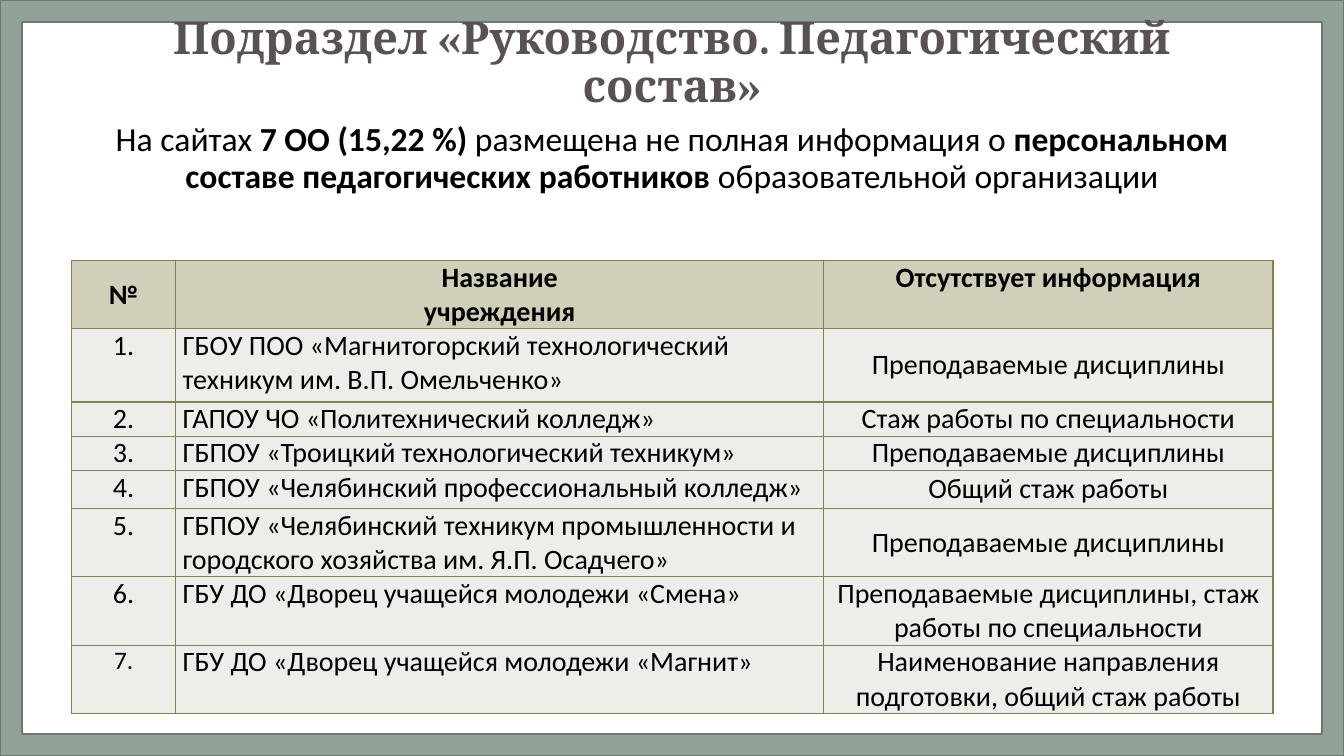
from dataclasses import dataclass

from lxml import etree
from pptx import Presentation
from pptx.dml.color import RGBColor
from pptx.enum.shapes import MSO_SHAPE
from pptx.enum.text import MSO_ANCHOR, MSO_AUTO_SIZE, PP_ALIGN
from pptx.oxml.ns import qn
from pptx.util import Pt

LEFT, MID = PP_ALIGN.LEFT, PP_ALIGN.CENTER
TOP, CENTER = MSO_ANCHOR.TOP, MSO_ANCHOR.MIDDLE
FRAME = MSO_SHAPE.FRAME
NO_FIT = MSO_AUTO_SIZE.NONE

COLORS = {
    "frame": "93A299", "edge": "6D7871", "title": "5A5155", "text": "000000",
    "head": "D1CEB9", "body": "EDEDEA", "rule": "848058",
}
WIDE, HIGH = 960, 540


@dataclass
class School:
    name: str
    gap: str
    height: float
    size: int = 20  # of the row number


SCHOOLS = [
    School("ГБОУ ПОО «Магнитогорский технологический техникум им. В.П. Омельченко»",
           "Преподаваемые дисциплины", 52.4),
    School("ГАПОУ ЧО «Политехнический колледж»", "Стаж работы по специальности", 24.4),
    School("ГБПОУ «Троицкий технологический техникум»", "Преподаваемые дисциплины", 24.4),
    School("ГБПОУ «Челябинский профессиональный колледж»", "Общий стаж работы", 27.3),
    School("ГБПОУ «Челябинский техникум промышленности и городского хозяйства "
           "им. Я.П. Осадчего»", "Преподаваемые дисциплины", 48.8),
    School("ГБУ ДО «Дворец учащейся молодежи «Смена»",
           "Преподаваемые дисциплины, стаж работы по специальности", 48.8),
    School("ГБУ ДО «Дворец учащейся молодежи «Магнит»",
           "Наименование направления подготовки, общий стаж работы", 48.8, 18),
]
HEADS = [("№", CENTER), ("Название\nучреждения", CENTER), ("Отсутствует информация", TOP)]
HEAD_HIGH = 48.8
COLS = [74.6, 462.8, 321]
INTRO = [
    ("На сайтах ", False),
    ("7 ОО (15,22 %) ", True),
    ("размещена не полная информация о ", False),
    ("персональном составе педагогических работников", True),
    (" образовательной организации", False),
]


def rgb(key: str) -> RGBColor:
    return RGBColor.from_string(COLORS[key])


def style(font, size: float, face: str = "Calibri", key: str = "text") -> None:
    font.size, font.name = Pt(size), face
    font.color.rgb = rgb(key)


def border(cell) -> None:
    props = cell._tc.get_or_add_tcPr()
    for side in ("lnL", "lnR", "lnT", "lnB"):
        line = etree.SubElement(props, qn("a:" + side), w=str(Pt(1)))
        fill = etree.SubElement(line, qn("a:solidFill"))
        etree.SubElement(fill, qn("a:srgbClr"), val=COLORS["rule"])


def put(cell, text: str, key: str, align=MID, anchor=CENTER,
        size: int = 20, bold: bool = False) -> None:
    border(cell)
    cell.fill.solid()
    cell.fill.fore_color.rgb = rgb(key)
    cell.margin_left = cell.margin_right = Pt(4.8)
    cell.margin_top = cell.margin_bottom = Pt(0)
    cell.vertical_anchor = anchor
    cell.text = text
    for para in cell.text_frame.paragraphs:
        para.alignment = align
        style(para.font, size)
        para.font.bold = bold


def draw_frame(slide) -> None:
    frame = slide.shapes.add_shape(FRAME, 0, 0, Pt(WIDE), Pt(HIGH))
    frame.adjustments[0] = 0.029
    frame.shadow.inherit = False
    frame.fill.solid()
    frame.fill.fore_color.rgb = rgb("frame")
    frame.line.color.rgb = rgb("edge")
    frame.line.width = Pt(1)
    # Send behind the title
    slide.shapes._spTree.insert(2, frame._element)


def draw_title(slide) -> None:
    title = slide.shapes.title
    title.left, title.top, title.width, title.height = Pt(66), Pt(17), Pt(828), Pt(57.6)
    body = title.text_frame
    body.text = "Подраздел «Руководство. Педагогический состав»"
    body.auto_size, body.word_wrap = NO_FIT, True
    body.vertical_anchor = CENTER
    para = body.paragraphs[0]
    para.alignment, para.line_spacing = MID, 0.9
    style(para.font, 32, "Cambria", "title")
    para.font.bold = True


def draw_intro(slide) -> None:
    box = slide.shapes.add_textbox(Pt(51), Pt(84.2), Pt(858), Pt(68.4))
    box.text_frame.word_wrap = True
    para = box.text_frame.paragraphs[0]
    para.alignment, para.line_spacing = MID, 0.9
    style(para.font, 24)
    for text, bold in INTRO:
        run = para.add_run()
        run.text, run.font.bold = text, bold


def draw_table(slide) -> None:
    highs = [HEAD_HIGH] + [school.height for school in SCHOOLS]
    table = slide.shapes.add_table(len(highs), len(COLS), Pt(51), Pt(186),
                                   Pt(sum(COLS)), Pt(sum(highs))).table
    for col, width in zip(table.columns, COLS):
        col.width = Pt(width)
    for row, height in zip(table.rows, highs):
        row.height = Pt(height)
    for i, (text, anchor) in enumerate(HEADS):
        put(table.cell(0, i), text, "head", anchor=anchor, bold=True)
    for i, school in enumerate(SCHOOLS, 1):
        put(table.cell(i, 0), f"{i}.", "body", anchor=TOP, size=school.size)
        put(table.cell(i, 1), school.name, "body", LEFT, TOP)
        put(table.cell(i, 2), school.gap, "body")


def main() -> None:
    deck = Presentation()
    deck.slide_width, deck.slide_height = Pt(WIDE), Pt(HIGH)
    slide = deck.slides.add_slide(deck.slide_layouts[5])  # title only
    draw_frame(slide)
    draw_title(slide)
    draw_intro(slide)
    draw_table(slide)
    deck.save("out.pptx")


if __name__ == "__main__":
    main()
